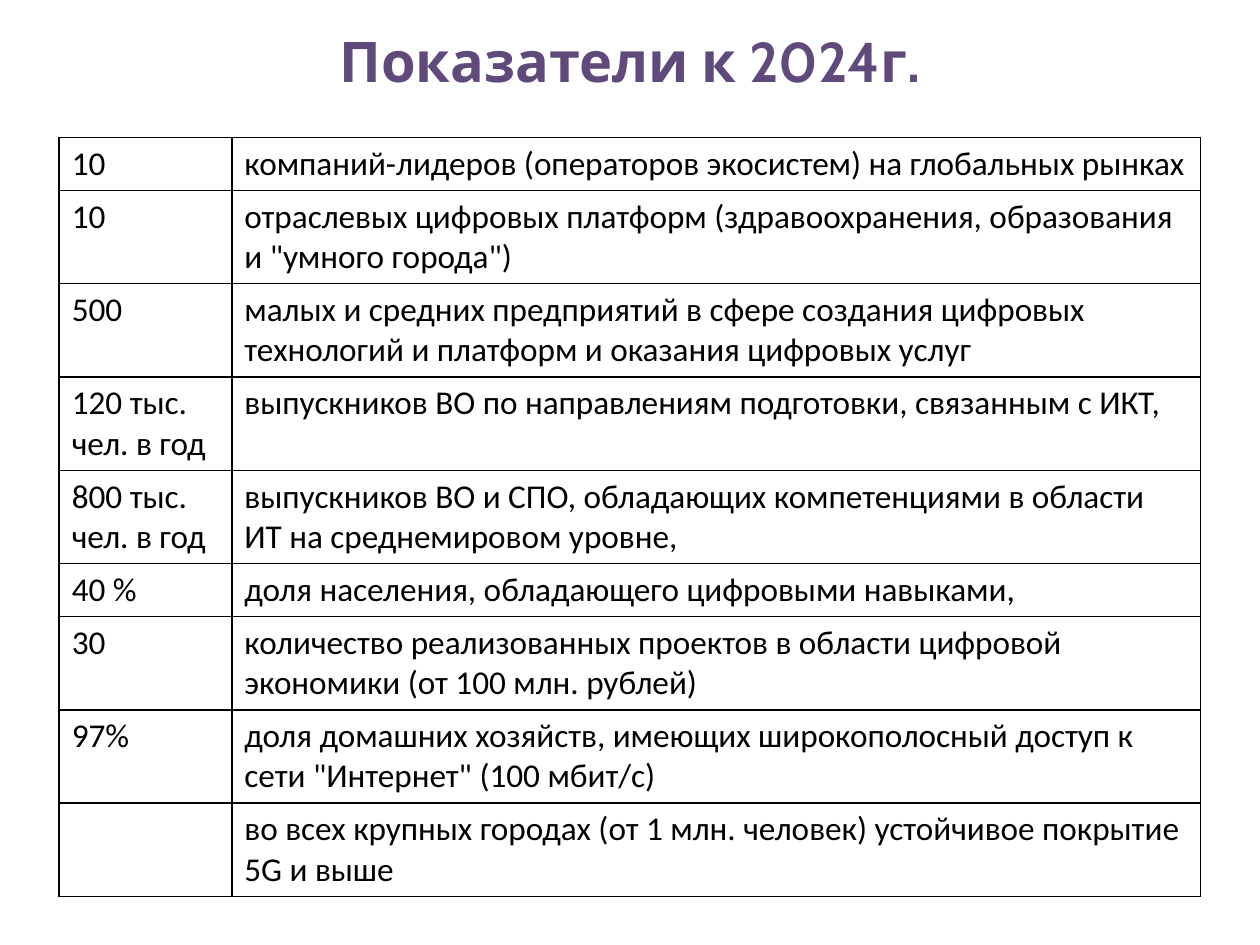
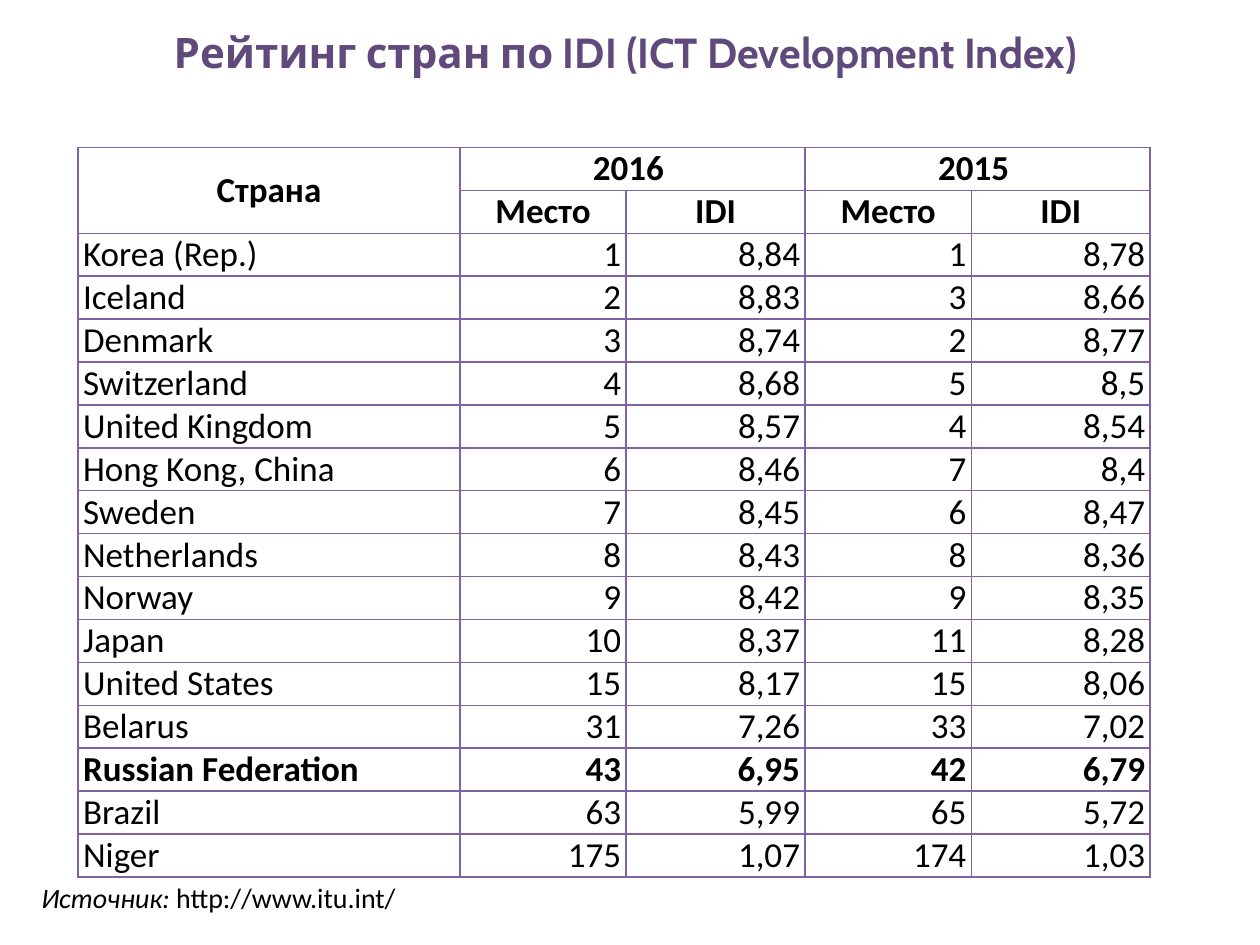
from lxml import etree
from pptx import Presentation
from pptx.dml.color import RGBColor
from pptx.enum import text as txt
from pptx.oxml import ns
from pptx.util import Inches, Pt

COLORS = {"title": "604A7B", "text": "000000", "grid": "000000", "grid_violet": "8064A2"}
FONTS = {"title": "Cabin", "text": "Calibri"}
LEFT, CENTER, RIGHT = txt.PP_ALIGN.LEFT, txt.PP_ALIGN.CENTER, txt.PP_ALIGN.RIGHT
TOP, MIDDLE, BOTTOM = txt.MSO_ANCHOR.TOP, txt.MSO_ANCHOR.MIDDLE, txt.MSO_ANCHOR.BOTTOM


def add_text(para, text, size=20, style="text", bold=False, italic=False, align=LEFT):
    """Append a formatted run to a paragraph."""
    para.alignment = align
    span = para.add_run()
    span.text = text
    span.font.name = FONTS[style]
    span.font.size = Pt(size)
    span.font.bold = bold
    span.font.italic = italic
    span.font.color.rgb = RGBColor.from_string(COLORS[style])


def set_borders(cell, color, width=1):
    """Draw all four sides of a cell; borders must precede its fill."""
    props = cell._tc.get_or_add_tcPr()
    for index, side in enumerate(("lnL", "lnR", "lnT", "lnB")):
        line = etree.Element(ns.qn(f"a:{side}"), w=str(Pt(width)))
        fill = etree.SubElement(line, ns.qn("a:solidFill"))
        etree.SubElement(fill, ns.qn("a:srgbClr"), val=COLORS[color])
        props.insert(index, line)


class Deck:
    def __init__(self):
        self.file = Presentation()
        self.file.slide_width, self.file.slide_height = Inches(10), Inches(7.5)
        self.page = None

    def add_page(self, title, size):
        self.page = self.file.slides.add_slide(self.file.slide_layouts[5])
        box = self.page.shapes.title
        box.left, box.top = Inches(0.5), Inches(0.16)
        box.width, box.height = Inches(9), Inches(1.17)
        frame = box.text_frame
        frame.auto_size = txt.MSO_AUTO_SIZE.NONE
        frame.vertical_anchor = TOP
        add_text(frame.paragraphs[0], title, size, style="title", bold=True, align=CENTER)

    def add_table(self, left, top, widths, heights, grid):
        """Add an unfilled table with a uniform grid."""
        table = self.page.shapes.add_table(
            len(heights), len(widths), Inches(left), Inches(top),
            Inches(sum(widths)), Inches(sum(heights))).table
        table.first_row = table.horz_banding = False
        for column, width in zip(table.columns, widths):
            column.width = Inches(width)
        for row, height in zip(table.rows, heights):
            row.height = Inches(height)
        for cell in table.iter_cells():
            cell.fill.background()
            set_borders(cell, grid)
        return table

    def fill_cell(self, cell, text, anchor=TOP, tight=False, **style):
        cell.vertical_anchor = anchor
        if tight:
            cell.margin_left = cell.margin_right = Inches(0.04)
            cell.margin_top = cell.margin_bottom = 0
        if text:
            add_text(cell.text_frame.paragraphs[0], text, **style)

    def add_source(self, label, address):
        box = self.page.shapes.add_textbox(
            Inches(0.23), Inches(6.94), Inches(9.3), Inches(0.37))
        box.text_frame.word_wrap = True
        para = box.text_frame.paragraphs[0]
        add_text(para, label, 16, italic=True)
        add_text(para, address, 16)


# Target, meaning, number of text lines
TARGETS = [
    ("10", "компаний-лидеров (операторов экосистем) на глобальных рынках", 1),
    ("10", 'отраслевых цифровых платформ (здравоохранения, образования и "умного города")', 2),
    ("500", "малых и средних предприятий в сфере создания цифровых технологий "
            "и платформ и оказания цифровых услуг", 2),
    ("120 тыс. чел. в год", "выпускников ВО по направлениям подготовки, связанным с ИКТ,", 2),
    ("800 тыс. чел. в год", "выпускников ВО и СПО, обладающих компетенциями в области "
                            "ИТ на среднемировом уровне,", 2),
    ("40 %", "доля населения, обладающего цифровыми навыками,", 1),
    ("30", "количество реализованных проектов в области цифровой экономики "
           "(от 100 млн. рублей)", 2),
    ("97%", "доля домашних хозяйств, имеющих широкополосный доступ к сети "
            '"Интернет" (100 мбит/с)', 2),
    ("", "во всех крупных городах (от 1 млн. человек) устойчивое покрытие 5G и выше", 2),
]

# Country, then place and index for 2016 and for 2015
RATING = [
    ("Korea (Rep.)", "1", "8,84", "1", "8,78"),
    ("Iceland", "2", "8,83", "3", "8,66"),
    ("Denmark", "3", "8,74", "2", "8,77"),
    ("Switzerland", "4", "8,68", "5", "8,5"),
    ("United Kingdom", "5", "8,57", "4", "8,54"),
    ("Hong Kong, China", "6", "8,46", "7", "8,4"),
    ("Sweden", "7", "8,45", "6", "8,47"),
    ("Netherlands", "8", "8,43", "8", "8,36"),
    ("Norway", "9", "8,42", "9", "8,35"),
    ("Japan", "10", "8,37", "11", "8,28"),
    ("United States", "15", "8,17", "15", "8,06"),
    ("Belarus", "31", "7,26", "33", "7,02"),
    ("Russian Federation", "43", "6,95", "42", "6,79"),
    ("Brazil", "63", "5,99", "65", "5,72"),
    ("Niger", "175", "1,07", "174", "1,03"),
]
HIGHLIGHT = "Russian Federation"


def build_targets(deck):
    deck.add_page("Показатели к 2024г.", 32)
    heights = [0.42 if lines == 1 else 0.74 for _, _, lines in TARGETS]
    table = deck.add_table(0.47, 1.09, [1.37, 7.69], heights, "grid")
    for row, (target, meaning, _) in enumerate(TARGETS):
        for column, text in enumerate((target, meaning)):
            deck.fill_cell(table.cell(row, column), text, size=19)


def build_rating(deck):
    deck.add_page("Рейтинг стран по IDI (ICT Development Index) ", 24)
    table = deck.add_table(0.62, 1.17, [3.03] + [1.32, 1.42] * 2,
                           [0.34] * (len(RATING) + 2), "grid_violet")

    # Two-level header
    table.cell(0, 0).merge(table.cell(1, 0))
    header = {(0, 0): "Страна"}
    for column, year in ((1, "2016 "), (3, "2015 ")):
        table.cell(0, column).merge(table.cell(0, column + 1))
        header.update({(0, column): year, (1, column): "Место", (1, column + 1): "IDI"})
    for (row, column), text in header.items():
        deck.fill_cell(table.cell(row, column), text, MIDDLE, tight=True,
                       bold=True, align=CENTER)

    # Countries
    for row, values in enumerate(RATING, start=2):
        for column, text in enumerate(values):
            deck.fill_cell(table.cell(row, column), text, BOTTOM, tight=True,
                           bold=values[0] == HIGHLIGHT, align=RIGHT if column else LEFT)

    deck.add_source("Источник: ", "http://www.itu.int/")


def main():
    deck = Deck()
    build_targets(deck)
    build_rating(deck)
    deck.file.save("out.pptx")


if __name__ == "__main__":
    main()
